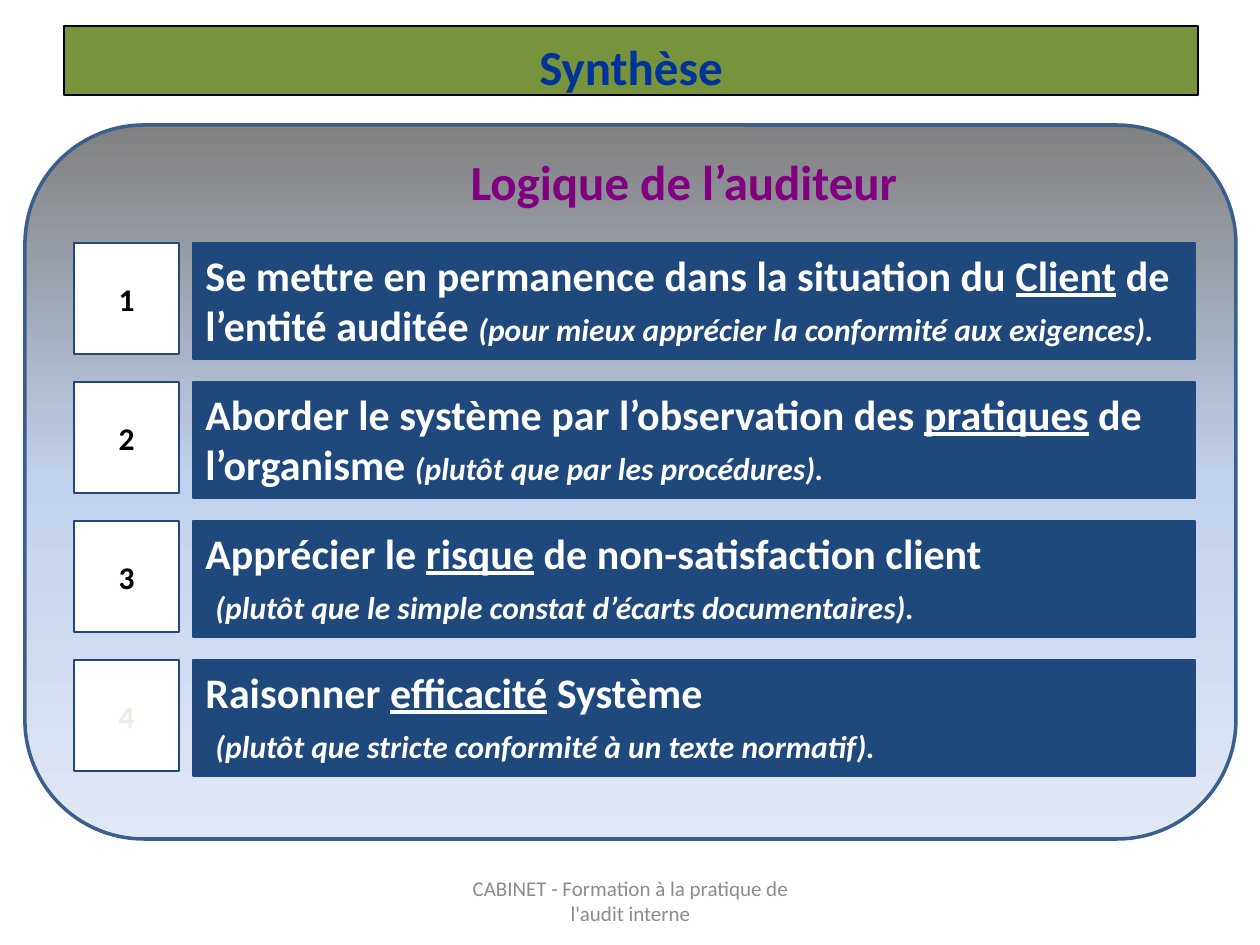
"""Build the summary slide on the auditor's way of thinking."""
from copy import deepcopy
from dataclasses import dataclass
from typing import NamedTuple

from pptx import Presentation
from pptx.dml.color import RGBColor
from pptx.enum.shapes import MSO_SHAPE
from pptx.enum.text import MSO_ANCHOR, PP_ALIGN
from pptx.oxml.ns import qn
from pptx.util import Emu, Pt

WHITE = RGBColor(0xFF, 0xFF, 0xFF)
BLACK = RGBColor(0x00, 0x00, 0x00)
NAVY = RGBColor(0x1F, 0x49, 0x7D)
PANEL_EDGE = RGBColor(0x3A, 0x5F, 0x8C)
OLIVE = RGBColor(0x77, 0x93, 0x3C)
TITLE_BLUE = RGBColor(0x00, 0x33, 0x99)
PURPLE = RGBColor(0x80, 0x00, 0x80)
FOOTER_GRAY = RGBColor(0x8C, 0x8C, 0x8C)
PALE = RGBColor(0xEE, 0xEC, 0xE1)
PANEL_STOPS = (
    (0, RGBColor(0x80, 0x80, 0x80)),
    (0.5, RGBColor(0xC2, 0xD1, 0xED)),
    (1, RGBColor(0xE1, 0xE8, 0xF5)),
)
FONT = "Calibri"
ROW_TOP, ROW_PITCH = 243, 139


class Box(NamedTuple):
    left: int
    top: int
    width: int
    height: int


@dataclass(frozen=True)
class Principle:
    before: str
    keyword: str
    after: str
    remark: str
    remark_below: bool = False
    number_color: RGBColor = BLACK


PRINCIPLES = (
    Principle("Se mettre en permanence dans la situation du ", "Client",
              " de l’entité auditée ",
              "(pour mieux apprécier la conformité aux exigences)."),
    Principle("Aborder le système par l’observation des ", "pratiques",
              " de l’organisme ", "(plutôt que par les procédures)."),
    Principle("Apprécier le ", "risque", " de non-satisfaction client",
              "(plutôt que le simple constat d’écarts documentaires).", True),
    Principle("Raisonner ", "efficacité", " Système",
              "(plutôt que stricte conformité à un texte normatif).", True, PALE),
)


def px(length: int) -> Emu:
    """Turn a length at 126 px to the inch into EMU."""
    return Emu(round(length * 914400 / 126))


def style(font, size: int, color: RGBColor, bold: bool = True) -> None:
    """Set the face, size, colour and weight of a font."""
    font.name, font.size, font.bold = FONT, Pt(size), bold
    font.color.rgb = color


def write_line(frame, text: str, size: int, color: RGBColor, bold: bool = True):
    """Write one centred paragraph into a frame and return it."""
    frame.word_wrap = True
    frame.vertical_anchor = MSO_ANCHOR.MIDDLE
    line = frame.paragraphs[0]
    line.text = text
    line.alignment = PP_ALIGN.CENTER
    style(line.font, size, color, bold)
    return line


def paint(shape, fill: RGBColor, edge: RGBColor, width: float) -> None:
    """Give a shape a solid fill and an outline."""
    shape.fill.solid()
    shape.fill.fore_color.rgb = fill
    shape.line.color.rgb = edge
    shape.line.width = Pt(width)


def add_block(slide, kind: MSO_SHAPE, box: Box):
    """Add a preset shape without shadow."""
    block = slide.shapes.add_shape(kind, *map(px, box))
    block.shadow.inherit = False
    return block


def add_panel(slide, box: Box) -> None:
    """Add the rounded panel with its three-stop vertical gradient."""
    panel = add_block(slide, MSO_SHAPE.ROUNDED_RECTANGLE, box)
    panel.fill.gradient()
    panel.fill.gradient_angle = 270
    stop_list = next(panel.fill._xPr.iter(qn("a:gsLst")))
    stop_list.insert(1, deepcopy(stop_list[0]))
    for stop, (position, color) in zip(panel.fill.gradient_stops, PANEL_STOPS):
        stop.position = position
        stop.color.rgb = color
    panel.line.color.rgb = PANEL_EDGE
    panel.line.width = Pt(2)


def add_principle(slide, number: int, principle: Principle) -> None:
    """Add a numbered square and the statement beside it."""
    top = ROW_TOP + (number - 1) * ROW_PITCH
    square = add_block(slide, MSO_SHAPE.RECTANGLE, Box(74, top, 105, 111))
    paint(square, WHITE, NAVY, 1.5)
    write_line(square.text_frame, str(number), 18, principle.number_color)

    statement = add_block(slide, MSO_SHAPE.RECTANGLE, Box(193, top, 1002, 116))
    paint(statement, NAVY, NAVY, 1.5)
    frame = statement.text_frame
    frame.word_wrap = True
    frame.vertical_anchor = MSO_ANCHOR.TOP
    sentence = frame.paragraphs[0]
    sentence.alignment = PP_ALIGN.LEFT
    style(sentence.font, 24, WHITE)
    for text in (principle.before, principle.keyword, principle.after):
        run = sentence.add_run()
        run.text = text
        if text == principle.keyword:
            run.font.underline = True

    remark_line = sentence
    if principle.remark_below:
        remark_line = frame.add_paragraph()
        remark_line.alignment = PP_ALIGN.LEFT
        remark_line.space_before = Pt(6)
        remark_line._p.get_or_add_pPr().set("marL", str(px(10)))
    remark = remark_line.add_run()
    remark.text = principle.remark
    style(remark.font, 18, WHITE)
    remark.font.italic = True


def add_caption(slide, box: Box):
    """Add an empty text box and return its frame."""
    return slide.shapes.add_textbox(*map(px, box)).text_frame


def main() -> None:
    """Build and save the slide."""
    deck = Presentation()
    deck.slide_width, deck.slide_height = px(1260), px(945)
    slide = deck.slides.add_slide(deck.slide_layouts[5])

    title = slide.shapes.title
    title.left, title.top, title.width, title.height = map(px, Box(64, 26, 1134, 69))
    paint(title, OLIVE, BLACK, 0.75)
    write_line(title.text_frame, "Synthèse", 28, TITLE_BLUE)
    title.text_frame.vertical_anchor = MSO_ANCHOR.TOP
    title.text_frame.margin_top = px(10)

    add_panel(slide, Box(25, 125, 1211, 714))
    heading = add_caption(slide, Box(144, 155, 1002, 59))
    heading.margin_left = px(90)
    write_line(heading, "Logique de l’auditeur", 28, PURPLE).line_spacing = 0.9

    for number, principle in enumerate(PRINCIPLES, start=1):
        add_principle(slide, number, principle)

    footer = add_caption(slide, Box(431, 876, 399, 50))
    footer.margin_left = footer.margin_right = px(20)
    write_line(footer, "CABINET - Formation à la pratique de l'audit interne",
               12, FOOTER_GRAY, bold=False)
    deck.save("out.pptx")


if __name__ == "__main__":
    main()
